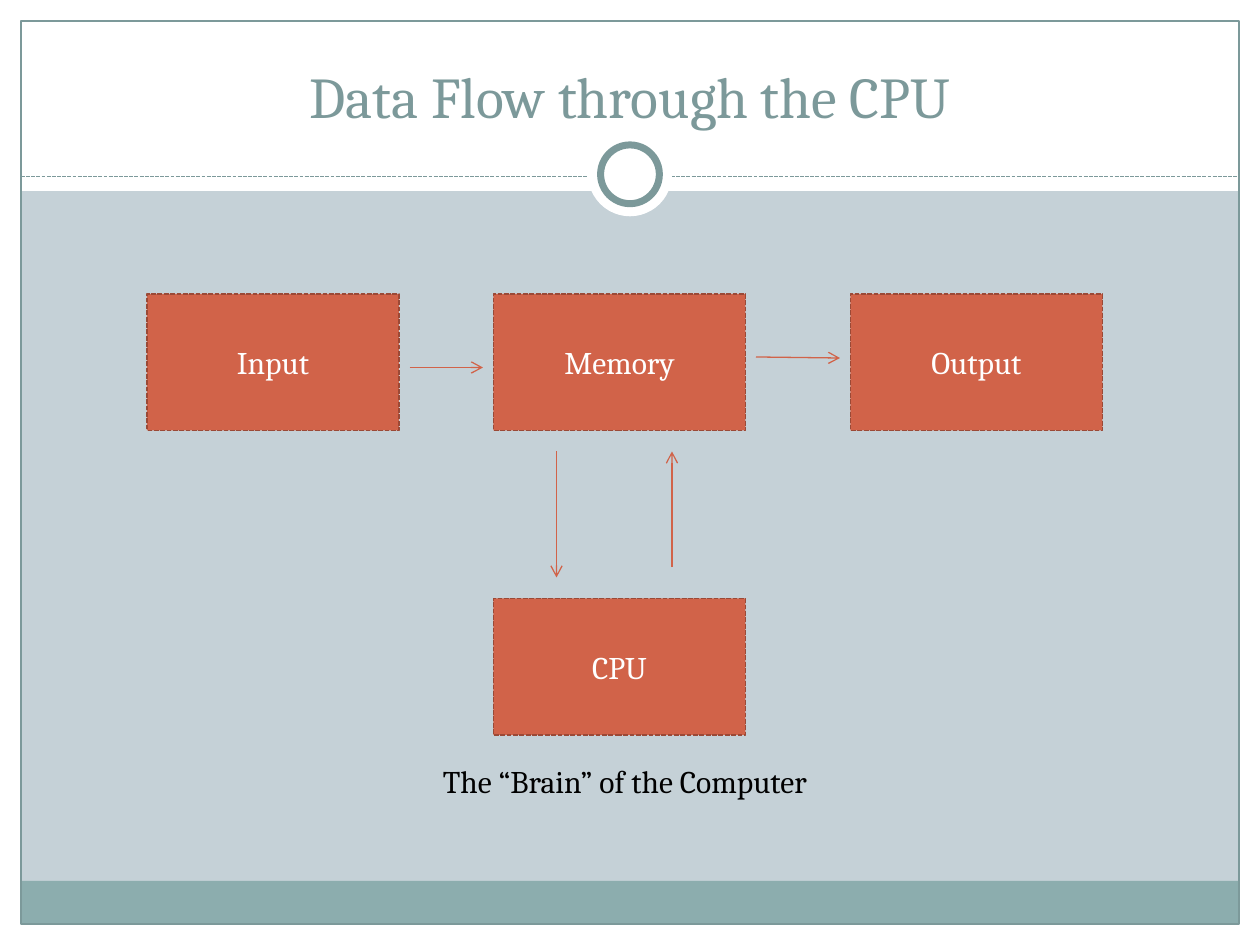
from pptx import Presentation
from pptx.dml.color import RGBColor
from pptx.enum.dml import MSO_LINE
from pptx.enum.shapes import MSO_CONNECTOR, MSO_SHAPE
from pptx.enum.text import MSO_ANCHOR, MSO_AUTO_SIZE, PP_ALIGN
from pptx.oxml.ns import qn
from pptx.util import Pt
from lxml import etree

RECTANGLE, OVAL = MSO_SHAPE.RECTANGLE, MSO_SHAPE.OVAL
STRAIGHT = MSO_CONNECTOR.STRAIGHT
DASHED = MSO_LINE.SQUARE_DOT
CENTER = PP_ALIGN.CENTER
MIDDLE, BOTTOM = MSO_ANCHOR.MIDDLE, MSO_ANCHOR.BOTTOM
NO_FIT, GROW = MSO_AUTO_SIZE.NONE, MSO_AUTO_SIZE.SHAPE_TO_FIT_TEXT

EMU_PER_PX = 7620
WIDTH, HEIGHT, MARGIN = 1200, 900, 20
INNER_WIDTH = WIDTH - 2 * MARGIN
INNER_HEIGHT = HEIGHT - 2 * MARGIN
HEADER_HEIGHT, FOOTER_TOP, RULE_Y = 182, 839, 168
BOX_WIDTH, BOX_HEIGHT = 240, 130

FONT = "Cambria"
WHITE = RGBColor(0xFF, 0xFF, 0xFF)
BLACK = RGBColor(0x00, 0x00, 0x00)
BACKGROUND = RGBColor(0xC5, 0xD1, 0xD7)
FOOTER = RGBColor(0x8C, 0xAD, 0xAE)
TEAL = RGBColor(0x7C, 0x99, 0x9A)
ORANGE = RGBColor(0xD1, 0x63, 0x49)
BROWN = RGBColor(0x9B, 0x49, 0x36)

BOXES = [
    ("Input", 140, 280),
    ("Memory", 470, 280),
    ("Output", 810, 280),
    ("CPU", 470, 570),
]
ARROWS = [
    (390, 350, 460, 350),
    (720, 340, 800, 341),
    (530, 430, 530, 550),
    (640, 540, 640, 430),
]


def px(*lengths):
    return [length * EMU_PER_PX for length in lengths]


def write_text(shape, text, size, color, alignment=None):
    shape.text_frame.text = text
    paragraph = shape.text_frame.paragraphs[0]
    paragraph.alignment = alignment
    font = paragraph.runs[0].font
    font.name, font.size = FONT, Pt(size)
    font.color.rgb = color


def style_line(line, color, width, dash=None):
    line.color.rgb = color
    line.width = Pt(width)
    if dash:
        line.dash_style = dash


def add_panel(slide, kind, box, fill=None, line=None, width=0.75, dash=None):
    shape = slide.shapes.add_shape(kind, *px(*box))
    shape.shadow.inherit = False
    if fill is None:
        shape.fill.background()
    else:
        shape.fill.solid()
        shape.fill.fore_color.rgb = fill
    if line is None:
        shape.line.fill.background()
    else:
        style_line(shape.line, line, width, dash)
    return shape


def add_line(slide, ends, color, dash=None, arrow=False):
    connector = slide.shapes.add_connector(STRAIGHT, *px(*ends))
    style_line(connector.line, color, 0.75, dash)
    properties = connector._element.spPr
    if arrow:
        etree.SubElement(properties.find(qn("a:ln")), qn("a:tailEnd"), type="arrow")
    etree.SubElement(properties, qn("a:effectLst"))


def add_frame(slide):
    right = WIDTH - MARGIN
    for box in [
        (0, HEIGHT - MARGIN, WIDTH, MARGIN),
        (0, 0, WIDTH, HEADER_HEIGHT),
        (0, 0, MARGIN, HEIGHT),
        (right, 0, MARGIN, HEIGHT),
    ]:
        add_panel(slide, RECTANGLE, box, WHITE)
    footer_height = HEIGHT - MARGIN - FOOTER_TOP
    add_panel(slide, RECTANGLE, (MARGIN, FOOTER_TOP, INNER_WIDTH, footer_height), FOOTER)
    add_panel(slide, RECTANGLE, (MARGIN, MARGIN, INNER_WIDTH, INNER_HEIGHT), line=TEAL)
    add_line(slide, (MARGIN, RULE_Y, right, RULE_Y), TEAL, DASHED)
    add_panel(slide, OVAL, (560, 126, 80, 80), WHITE)
    add_panel(slide, OVAL, (572, 138, 56, 56), WHITE, TEAL, 4)


def place_title(slide, text):
    title = slide.shapes.title
    title.left, title.top, title.width, title.height = px(40, 30, 1120, 100)
    write_text(title, text, 33, TEAL, CENTER)
    title.text_frame.vertical_anchor = BOTTOM
    title.text_frame.auto_size = NO_FIT
    slide.shapes._spTree.append(title._element)


def add_box(slide, label, left, top):
    box = (left, top, BOX_WIDTH, BOX_HEIGHT)
    shape = add_panel(slide, RECTANGLE, box, ORANGE, BROWN, 0.9, DASHED)
    write_text(shape, label, 18, WHITE, CENTER)
    shape.text_frame.vertical_anchor = MIDDLE


def add_caption(slide, text):
    caption = slide.shapes.add_textbox(*px(410, 720, 377, 48))
    write_text(caption, text, 18, BLACK)
    caption.text_frame.word_wrap = False
    caption.text_frame.auto_size = GROW


def main():
    presentation = Presentation()
    presentation.slide_width, presentation.slide_height = px(WIDTH, HEIGHT)
    slide = presentation.slides.add_slide(presentation.slide_layouts[5])
    slide.background.fill.solid()
    slide.background.fill.fore_color.rgb = BACKGROUND
    add_frame(slide)
    place_title(slide, "Data Flow through the CPU")
    for label, left, top in BOXES:
        add_box(slide, label, left, top)
    for ends in ARROWS:
        add_line(slide, ends, ORANGE, arrow=True)
    add_caption(slide, "The “Brain” of the Computer")
    presentation.save("out.pptx")


if __name__ == "__main__":
    main()
